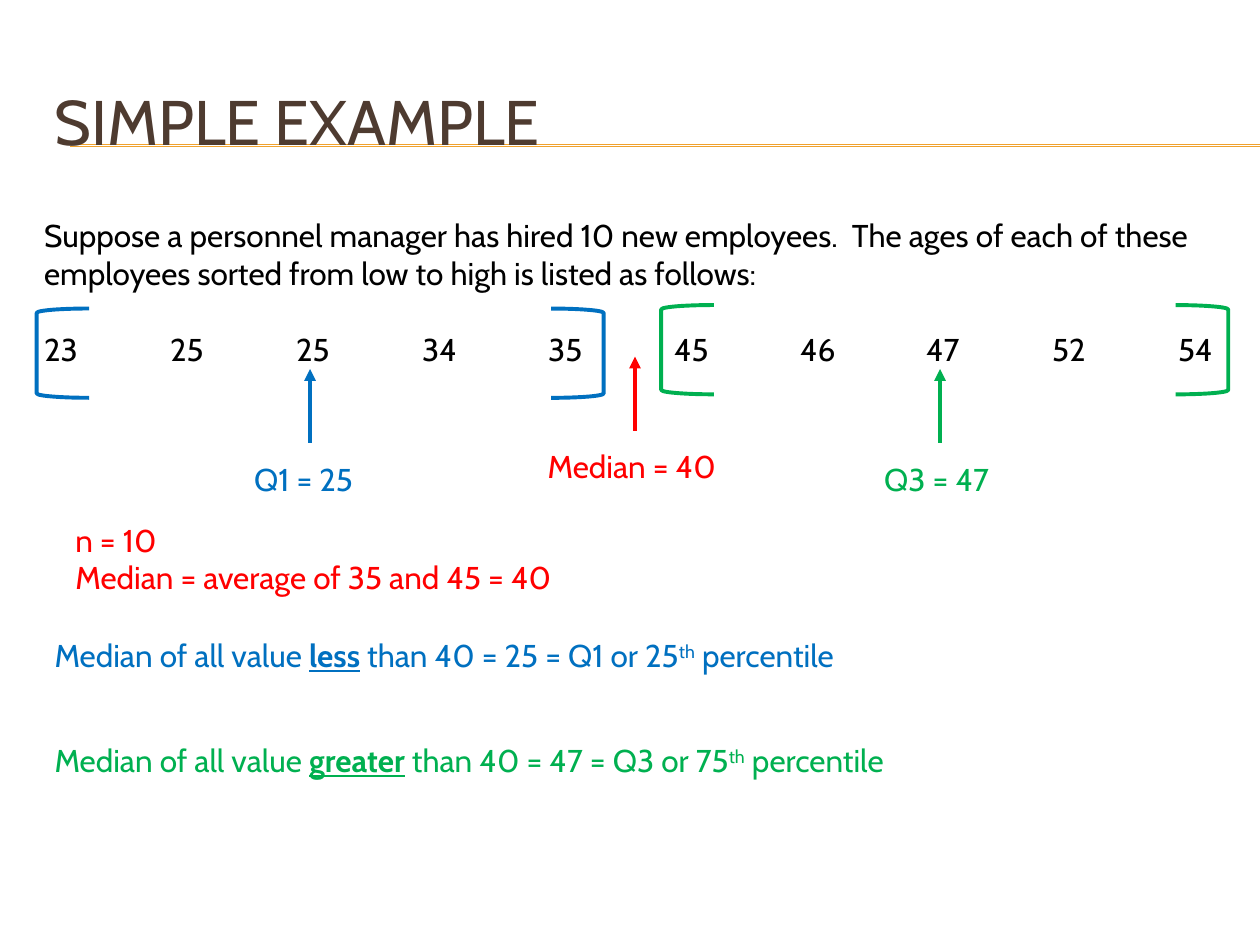
from lxml.etree import SubElement
from pptx import Presentation
from pptx.dml.color import RGBColor
from pptx.enum.shapes import MSO_CONNECTOR, MSO_SHAPE
from pptx.enum.text import MSO_ANCHOR, MSO_AUTO_SIZE, PP_ALIGN
from pptx.oxml.ns import qn
from pptx.util import Cm, Pt

# Theme: colours, font and sizes in one place
THEME = {
    "font": "Cabin", "head": 36, "body": 18, "thin": 0.75, "thick": 2.25,
    "brown": "4E3B30", "gold": "F0A22E", "black": "000000",
    "red": "FF0000", "blue": "0070C0", "green": "00B050",
}

# Content; a run is (words, style)
TITLE = "SIMPLE EXAMPLE"
INTRO = ("Suppose a personnel manager has hired 10 new employees.  The ages of "
         "each of these employees sorted from low to high is listed as follows:")
AGES = [23, 25, 25, 34, 35, 45, 46, 47, 52, 54]
FACTS = ["n = 10", "Median = average of 35 and 45 = 40"]
RULES = [12.7, 14.82]
NOTES = [  # colour, stressed word, values, place in cm from top
    ("blue", "less", " than 40 = 25 = Q1 or 25", 12.7),
    ("green", "greater", " than 40 = 47 = Q3 or 75", 14.82),
]
MARKS = [  # colour, caption, centre, top, width
    ("red", "Median = 40", 12.8, 8.89, 4.02),
    ("blue", "Q1 = 25", 6.25, 9.14, 2.75),
    ("green", "Q3 = 47", 18.95, 9.14, 2.75),
]
HALVES = [("green", 13.33, 6.15), ("blue", 0.74, 6.22)]
SPAN = 10.37  # from left bracket to right bracket
STYLES = {
    "plain": {},
    "stress": {"bold": True, "underline": True},
    "raised": {},
}


def tint(name):
    return RGBColor.from_string(THEME[name])


def put(item, values):
    for key, value in values.items():
        setattr(item, key, value)


def write(para, runs, color, size="body"):
    for words, style in runs:
        run = para.add_run()
        run.text = words
        put(run.font, {"name": THEME["font"], "size": Pt(THEME[size]),
                       **STYLES[style]})
        run.font.color.rgb = tint(color)
        if style == "raised":
            run._r.get_or_add_rPr().set("baseline", "30000")


def add_text(slide, box, paras, color, align=PP_ALIGN.LEFT):
    frame = slide.shapes.add_textbox(*map(Cm, box)).text_frame
    put(frame, {"word_wrap": True, "auto_size": MSO_AUTO_SIZE.NONE})
    for i, runs in enumerate(paras):
        para = frame.add_paragraph() if i else frame.paragraphs[0]
        para.alignment = align
        write(para, runs, color)
    return frame


def add_line(slide, ends, color, width, arrow=False):
    line = slide.shapes.add_connector(MSO_CONNECTOR.STRAIGHT, *map(Cm, ends))
    line.line.color.rgb = tint(color)
    line.line.width = Pt(THEME[width])
    props = line._element.spPr
    if arrow:
        SubElement(props.find(qn("a:ln")), qn("a:headEnd"), type="triangle")
    SubElement(props, qn("a:effectLst"))


def add_bracket(slide, left, top, color, turn):
    mark = slide.shapes.add_shape(
        MSO_SHAPE.LEFT_BRACKET, *map(Cm, (left, top, 1.06, 1.8)))
    mark.rotation = turn
    mark.shadow.inherit = False
    mark.fill.background()
    mark.line.color.rgb = tint(color)
    mark.line.width = Pt(THEME["thick"])


def main():
    deck = Presentation()
    put(deck, {"slide_width": Cm(25.4), "slide_height": Cm(19.05)})
    slide = deck.slides.add_slide(deck.slide_layouts[5])

    # Double gold rule, with the title in front of it
    for y in (2.92, 2.95):
        add_line(slide, (1.42, y, 25.4, y), "gold", "thin")
    title = slide.shapes.title
    slide.shapes._spTree.append(title._element)
    put(title, dict(zip(("left", "top", "width", "height"),
                        map(Cm, (0.85, 1.27, 24.13, 2.33)))))
    put(title.text_frame, {"vertical_anchor": MSO_ANCHOR.MIDDLE,
                           "auto_size": MSO_AUTO_SIZE.NONE})
    head = title.text_frame.paragraphs[0]
    head.alignment = PP_ALIGN.LEFT
    write(head, [(TITLE, "plain")], "brown", "head")

    # Opening text and the ages, one tab stop per 2.54 cm
    row = "\t".join(map(str, AGES))
    frame = add_text(slide, (0.64, 4.23, 24.34, 3.33),
                     [[(INTRO, "plain")], [(row, "plain")]], "black")
    ages = frame.paragraphs[1]
    ages.space_before = Pt(21.8)
    stops = SubElement(ages._p.get_or_add_pPr(), qn("a:tabLst"))
    for i in range(1, len(AGES)):
        SubElement(stops, qn("a:tab"), pos=str(Cm(2.54 * i)), algn="l")

    # Working for the median and the quartiles
    add_text(slide, (1.27, 10.37, 12.07, 1.8),
             [[(fact, "plain")] for fact in FACTS], "red")
    for color, word, rest, top in NOTES:
        runs = [("Median of all value ", "plain"), (word, "stress"),
                (rest, "plain"), ("th", "raised"), (" percentile", "plain")]
        add_text(slide, (0.85, top, 20.53, 1.02), [runs], color)

    # Captions, each under its arrow
    for color, words, mid, top, width in MARKS:
        add_line(slide, (mid, top - 1.7, mid, top - 0.2), color, "thick", True)
        add_text(slide, (mid - width / 2, top, width, 1.02),
                 [[(words, "plain")]], color)

    # Brackets round each half of the ages
    for color, left, top in HALVES:
        add_bracket(slide, left, top, color, 0)
        add_bracket(slide, left + SPAN, top, color, 180)

    deck.save("out.pptx")


if __name__ == "__main__":
    main()
